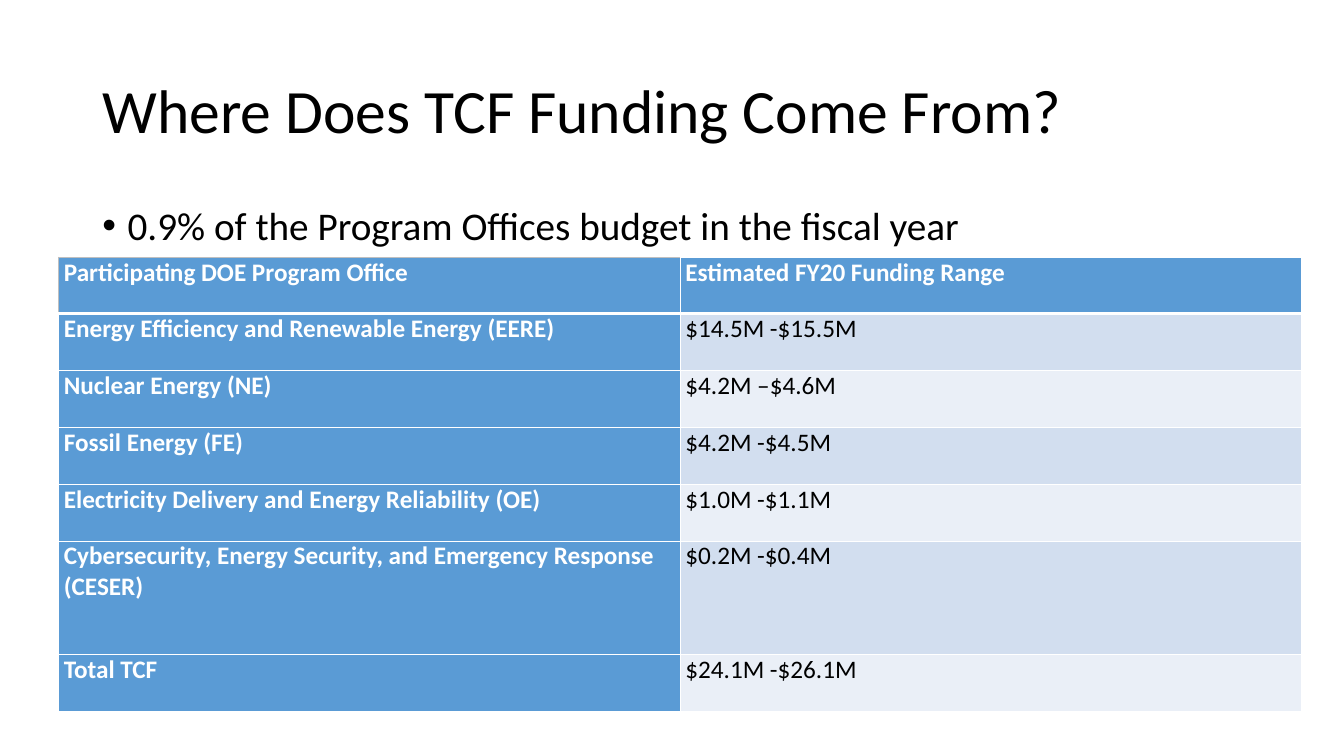
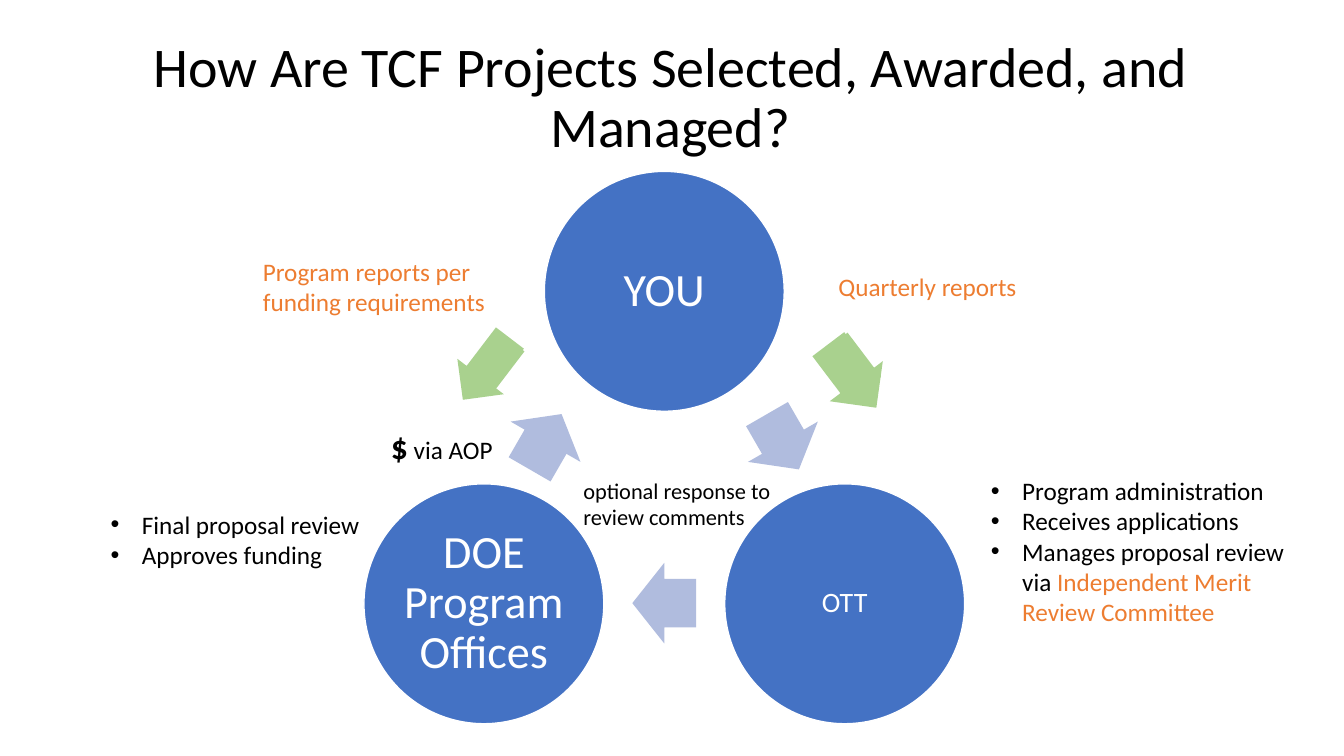
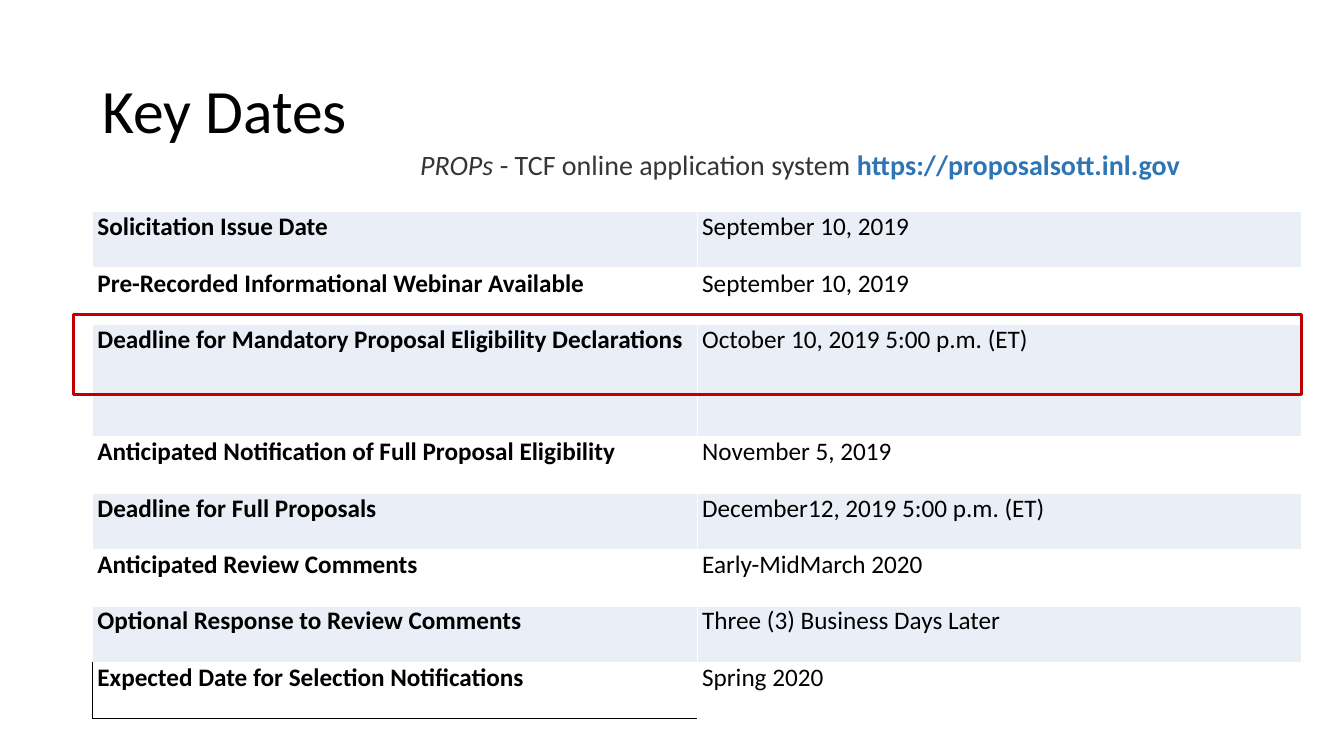
from math import cos, radians, sin

from lxml import etree
from pptx import Presentation
from pptx import util as u
from pptx.dml.color import RGBColor
from pptx.enum import shapes, text
from pptx.oxml.ns import qn

WIDE, HIGH = u.Inches(13.333), u.Inches(7.5)
COLS, ROWS = 40, 22.5
FACE = "Calibri"
BLACK, WHITE, GREY, RED = "000000", "FFFFFF", "BFBFBF", "C00000"
HEAD, BAND, PALE = "5A9BD5", "D2DEEF", "EAEFF7"
BLUE, LILAC, GREEN, ORANGE = "4472C4", "B0BCDE", "A9D18E", "ED7D31"
INK, LINK = "353535", "2E75B6"
LEFT, MID = text.PP_ALIGN.LEFT, text.PP_ALIGN.CENTER
TOP, CORE = text.MSO_ANCHOR.TOP, text.MSO_ANCHOR.MIDDLE
OVAL, RECT = shapes.MSO_SHAPE.OVAL, shapes.MSO_SHAPE.RECTANGLE
ARROW = shapes.MSO_SHAPE.RIGHT_ARROW
TITLE = (2.75, 1.2, 34.5, 4.35)

FUNDS = [
    ("Participating DOE Program Office", "Estimated FY20 Funding Range"),
    ("Energy Efficiency and Renewable Energy (EERE)", "$14.5M -$15.5M"),
    ("Nuclear Energy (NE)", "$4.2M –$4.6M"),
    ("Fossil Energy (FE)", "$4.2M -$4.5M"),
    ("Electricity Delivery and Energy Reliability (OE)", "$1.0M -$1.1M"),
    ("Cybersecurity, Energy Security, and Emergency Response (CESER)", "$0.2M -$0.4M"),
    ("Total TCF", "$24.1M -$26.1M"),
]
DATES = [
    ("Solicitation Issue Date", "September 10, 2019"),
    ("Pre-Recorded Informational Webinar Available", "September 10, 2019"),
    ("Deadline for Mandatory Proposal Eligibility Declarations", "October 10, 2019 5:00 p.m. (ET)"),
    ("Anticipated Notification of Full Proposal Eligibility", "November 5, 2019"),
    ("Deadline for Full Proposals", "December12, 2019 5:00 p.m. (ET)"),
    ("Anticipated Review Comments", "Early-MidMarch 2020"),
    ("Optional Response to Review Comments", "Three (3) Business Days Later"),
    ("Expected Date for Selection Notifications", "Spring 2020"),
]


def hue(code):
    """Turn a hex string into a colour."""
    return RGBColor.from_string(code)


def span(x, y, w, h):
    """Turn grid columns and rows into slide lengths."""
    return [int(n) for n in (x * WIDE / COLS, y * HIGH / ROWS, w * WIDE / COLS, h * HIGH / ROWS)]


def put(item, vals):
    """Set each attribute in a dict of format values."""
    for key, val in vals.items():
        setattr(item, key, val)


def place(item, box):
    """Move an item to a box on the grid."""
    put(item, dict(zip(("left", "top", "width", "height"), span(*box))))


def write(frame, paras, size, ink=BLACK, align=LEFT, anchor=TOP, pad=None, dot=0, **form):
    """Fill a frame with paragraphs of (text, format) runs."""
    put(frame, {"word_wrap": True, "auto_size": text.MSO_AUTO_SIZE.NONE, "vertical_anchor": anchor})
    if pad is not None:
        put(frame, {"margin_" + side: u.Inches(pad) for side in ("left", "right", "top", "bottom")})
    for i, runs in enumerate(paras):
        para = frame.add_paragraph() if i else frame.paragraphs[0]
        put(para, {"alignment": align, **form})
        if dot:
            bullet(para, dot)
        for words, extra in [(runs, {})] if isinstance(runs, str) else runs:
            run = para.add_run()
            run.text = words
            look = {"name": FACE, "size": u.Pt(size), "ink": ink, **extra}
            run.font.color.rgb = hue(look.pop("ink"))
            put(run.font, look)


def bullet(para, dent):
    """Give a paragraph a round bullet and a hanging indent."""
    prop = para._p.get_or_add_pPr()
    prop.set("marL", str(u.Inches(dent)))
    prop.set("indent", str(-u.Inches(dent)))
    etree.SubElement(prop, qn("a:buFont")).set("typeface", "Arial")
    etree.SubElement(prop, qn("a:buChar")).set("char", "•")


def page(deck, words, layout=5, box=TITLE, size=44, align=LEFT):
    """Add a slide with its title."""
    slide = deck.slides.add_slide(deck.slide_layouts[layout])
    place(slide.shapes.title, box)
    write(slide.shapes.title.text_frame, [words], size, align=align, anchor=CORE, line_spacing=0.9)
    return slide


def note(slide, box, paras, size=18, **form):
    """Add a text box."""
    write(slide.shapes.add_textbox(*span(*box)).text_frame, paras, size, **form)


def form(slide, kind, box, fill=None, line=None, wide=1, turn=0):
    """Add a preset shape with plain fill and line."""
    item = slide.shapes.add_shape(kind, *span(*box))
    item.shadow.inherit = False
    item.rotation = turn
    if fill:
        item.fill.solid()
        item.fill.fore_color.rgb = hue(fill)
    else:
        item.fill.background()
    if line:
        item.line.color.rgb = hue(line)
        item.line.width = u.Pt(wide)
    else:
        item.line.fill.background()
    if kind == ARROW:
        item.adjustments[0], item.adjustments[1] = 0.6, 0.5
    return item


def edge(cell, sides):
    """Draw cell borders from a dict of side to (colour, points)."""
    prop = cell._tc.get_or_add_tcPr()
    drawn = [side for side in "LRTB" if side in sides]
    for i, side in enumerate(drawn):
        code, wide = sides[side]
        line = etree.Element(qn("a:ln" + side), w=str(u.Pt(wide)))
        solid = etree.SubElement(line, qn("a:solidFill"))
        etree.SubElement(solid, qn("a:srgbClr"), val=code)
        prop.insert(i, line)


def grid(slide, box, rows, tall, style):
    """Add a two-column table whose row `tall` has double height."""
    table = slide.shapes.add_table(len(rows), 2, *span(*box)).table
    put(table, {"first_row": False, "horz_banding": False})
    unit = span(*box)[3] // (len(rows) + 1)
    for r, row in enumerate(rows):
        table.rows[r].height = unit * (2 if r == tall else 1)
        for c, words in enumerate(row):
            cell = table.cell(r, c)
            fill, ink, bold, sides = style(r, c)
            put(cell, {"margin_left": u.Inches(0.05), "margin_right": u.Inches(0.05),
                       "margin_top": 0, "margin_bottom": 0})
            write(cell.text_frame, [[(words, {"bold": bold})]], 18, ink)
            cell.fill.solid()
            cell.fill.fore_color.rgb = hue(fill)
            edge(cell, sides)


def fund(r, c):
    """Style a funding cell: blue head row and column, banded values."""
    sides = dict.fromkeys("LRTB", (WHITE, 0.75))
    if r < 2:
        sides["T" if r else "B"] = (WHITE, 2.25)
    if r == c == 0:
        sides.update(dict.fromkeys("LT", (GREY, 0.75)))
    if r == 0 or c == 0:
        return HEAD, WHITE, True, sides
    return (BAND if r % 2 else PALE), BLACK, False, sides


def date(r, c):
    """Style a date cell: pale bands, bold first column."""
    sides = dict.fromkeys("LR", (WHITE, 0.75))
    if r == len(DATES) - 1:
        sides["B"] = (WHITE, 0.75)
        if c == 0:
            sides.update(dict.fromkeys("LB", (BLACK, 0.75)))
    return (WHITE if r % 2 else PALE), BLACK, c == 0, sides


def ring(slide):
    """Draw the cycle of three circles and the arrows between them."""
    def spot(far, deg, w, h):
        """Centre a box at a distance and angle from the cycle's centre."""
        x, y = 19.77 + far * cos(radians(deg)), 14.87 + far * sin(radians(deg))
        return x - w / 2, y - h / 2, w, h

    circles = [("YOU", 33), ("OTT", 20), ("DOE Program Offices", 33)]
    for i, (words, size) in enumerate(circles):
        disc = form(slide, OVAL, spot(6.2, 120 * i - 90, 7.14, 7.14), BLUE, WHITE)
        write(disc.text_frame, [words], size, WHITE, MID, CORE, 0.05, line_spacing=0.9)
    for far, deg, turn in [(3.93, -26, 60), (3.08, 90, 180), (3.93, 206, 300)]:
        form(slide, ARROW, spot(far, deg, 1.9, 2.4), LILAC, turn=turn)


def main():
    """Build the three slides."""
    deck = Presentation()
    put(deck, {"slide_width": WIDE, "slide_height": HIGH})

    slide = page(deck, "Where Does TCF Funding Come From?", 1)
    body = slide.placeholders[1]
    place(body, (2.75, 6, 34.5, 14.28))
    write(body.text_frame, ["0.9% of the Program Offices budget in the fiscal year"], 28,
          dot=0.25, line_spacing=0.9, space_before=u.Pt(10))
    grid(slide, (1.75, 7.65, 37, 13.53), FUNDS, 5, fund)

    slide = page(deck, "How Are TCF Projects Selected, Awarded, and Managed?",
                 box=(2.7, 0.78, 34.5, 4.35), size=40, align=MID)
    ring(slide)
    note(slide, (29.2, 14, 10.08, 5.76), [
        "Program administration", "Receives applications",
        [("Manages proposal review via ", {}),
         ("Independent Merit Review Committee", {"ink": ORANGE})]], dot=0.31)
    note(slide, (3, 15, 8.28, 3.03), ["Final proposal review", "Approves funding"], dot=0.31)
    note(slide, (11.34, 12.54, 5.46, 1.5),
         [[("$", {"size": u.Pt(24), "bold": True}), (" via AOP", {})]])
    note(slide, (17.07, 14.04, 6.78, 1.92), ["optional response to review comments"], 16)
    for kind, box, turn in [(ARROW, (24.18, 10.2, 2.37, 1.98), 52.9),
                            (RECT, (24.42, 10.32, 1.65, 1.2), 52.9),
                            (ARROW, (13.32, 10.11, 2.31, 1.74), 127.3),
                            (RECT, (13.89, 10.26, 1.62, 1.05), 127.3)]:
        form(slide, kind, box, GREEN, turn=turn)
    note(slide, (24.66, 7.92, 6.54, 1.2), ["Quarterly reports"], ink=ORANGE)
    note(slide, (7.53, 7.47, 8.67, 2.13), ["Program reports per funding requirements"], ink=ORANGE)

    slide = page(deck, "Key Dates")
    grid(slide, (2.75, 6.3, 36, 15.09), DATES, 2, date)
    note(slide, (12.21, 4.23, 23.52, 1.32), [[
        ("PROPs ", {"italic": True}), ("- TCF online application system ", {}),
        ("https://proposalsott.inl.gov", {"ink": LINK, "bold": True})]], 20, ink=INK)
    form(slide, RECT, (2.19, 9.36, 36.54, 2.37), line=RED, wide=2.25)

    deck.save("out.pptx")


if __name__ == "__main__":
    main()
